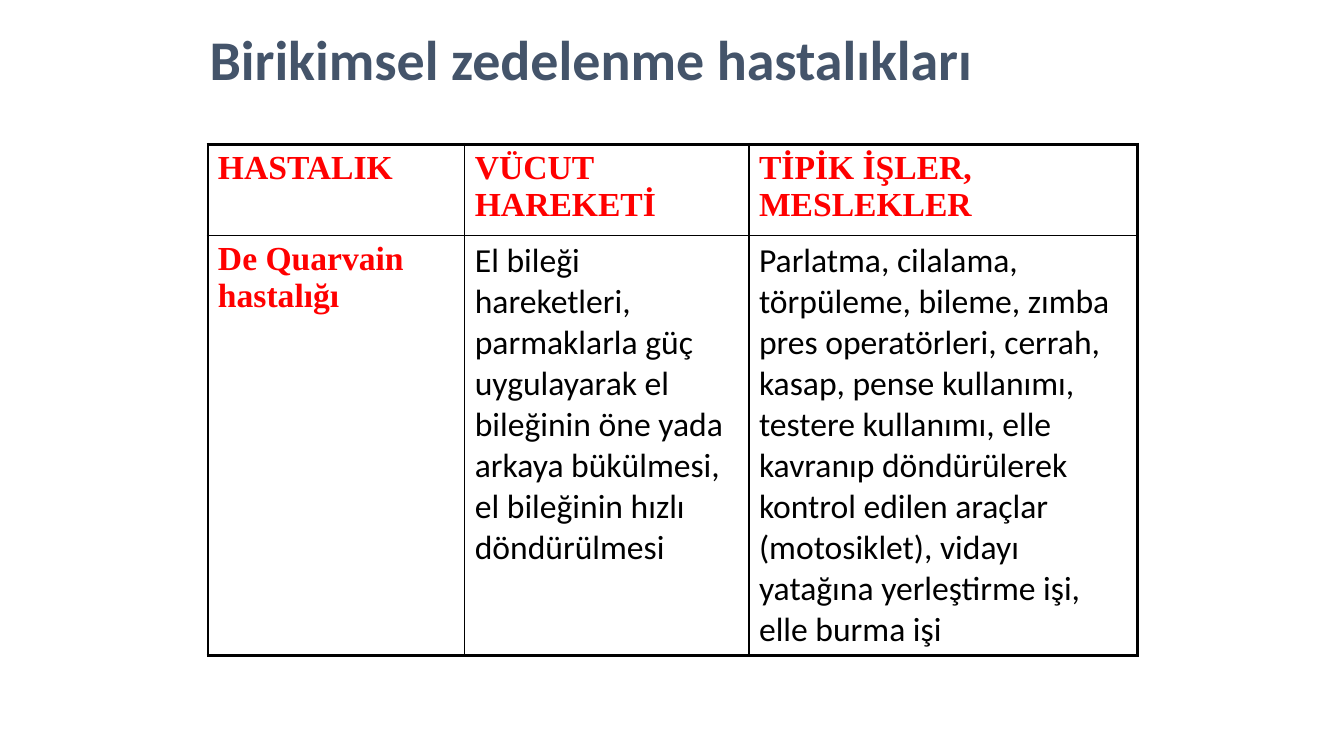
import dataclasses

import pptx
import pptx.dml.color
import pptx.enum.text
import pptx.oxml
import pptx.oxml.ns
import pptx.util

Pt = pptx.util.Pt
RGB = pptx.dml.color.RGBColor.from_string


@dataclasses.dataclass(frozen=True)
class Theme:
    title_color: str = "44546A"
    label_color: str = "FF0000"
    body_color: str = "000000"
    border_color: str = "000000"
    sans: str = "Calibri"
    serif: str = "Times New Roman"
    title_size: float = 40
    table_size: float = 24
    outer_border: float = 2.25
    inner_border: float = 1


THEME = Theme()

HEADING = "Birikimsel zedelenme hastalıkları"
DISEASES = [
    ["HASTALIK", "VÜCUT HAREKETİ", "TİPİK İŞLER, MESLEKLER"],
    [
        "De Quarvain hastalığı",
        "El bileği hareketleri, parmaklarla güç uygulayarak el bileğinin öne "
        "yada arkaya bükülmesi, el bileğinin hızlı döndürülmesi",
        "Parlatma, cilalama, törpüleme, bileme, zımba pres operatörleri, cerrah, "
        "kasap, pense kullanımı, testere kullanımı, elle kavranıp döndürülerek "
        "kontrol edilen araçlar (motosiklet), vidayı yatağına yerleştirme işi, "
        "elle burma işi",
    ],
]
COLUMN_WIDTHS = [183.5, 203, 277.5]
ROW_HEIGHTS = [65, 299]


def style_font(font, name, size, color, bold):
    font.name = name
    font.size = Pt(size)
    font.bold = bold
    font.color.rgb = RGB(color)


def set_borders(cell, widths):
    """Draw the cell's edges, given as a width for each of L, R, T and B."""
    properties = cell._tc.get_or_add_tcPr()
    for side, width in widths.items():
        properties.append(pptx.oxml.parse_xml(
            f'<a:ln{side} {pptx.oxml.ns.nsdecls("a")} w="{int(Pt(width))}">'
            f'<a:solidFill><a:srgbClr val="{THEME.border_color}"/></a:solidFill>'
            f'</a:ln{side}>'))


def add_heading(slide, left, top, width, height):
    heading = slide.shapes.title
    heading.left, heading.top = Pt(left), Pt(top)
    heading.width, heading.height = Pt(width), Pt(height)
    frame = heading.text_frame
    frame.text = HEADING
    frame.word_wrap = True
    frame.auto_size = pptx.enum.text.MSO_AUTO_SIZE.NONE
    frame.vertical_anchor = pptx.enum.text.MSO_ANCHOR.MIDDLE
    line = frame.paragraphs[0]
    line.alignment = pptx.enum.text.PP_ALIGN.LEFT
    line.line_spacing = 0.9
    style_font(line.font, THEME.sans, THEME.title_size, THEME.title_color, True)


def add_disease_table(slide, left, top):
    last_row, last_column = len(ROW_HEIGHTS) - 1, len(COLUMN_WIDTHS) - 1
    diseases = slide.shapes.add_table(
        len(ROW_HEIGHTS), len(COLUMN_WIDTHS), Pt(left), Pt(top),
        Pt(sum(COLUMN_WIDTHS)), Pt(sum(ROW_HEIGHTS))).table
    diseases.first_row = diseases.horz_banding = False
    for column, width in zip(diseases.columns, COLUMN_WIDTHS):
        column.width = Pt(width)
    for row, height in zip(diseases.rows, ROW_HEIGHTS):
        row.height = Pt(height)

    def border(is_outer):
        return THEME.outer_border if is_outer else THEME.inner_border

    for r, entries in enumerate(DISEASES):
        for c, entry in enumerate(entries):
            cell = diseases.cell(r, c)
            cell.text = entry
            set_borders(cell, {"L": border(c == 0), "R": border(c == last_column),
                               "T": border(r == 0), "B": border(r == last_row)})
            cell.fill.background()
            # The header row and the first column are labels
            is_label = r == 0 or c == 0
            style_font(cell.text_frame.paragraphs[0].font,
                       THEME.serif if is_label else THEME.sans, THEME.table_size,
                       THEME.label_color if is_label else THEME.body_color, is_label)


def main():
    deck = pptx.Presentation()
    deck.slide_width, deck.slide_height = Pt(960), Pt(540)
    slide = deck.slides.add_slide(deck.slide_layouts.get_by_name("Title Only"))
    add_heading(slide, left=142.5, top=16.5, width=669.5, height=56)
    add_disease_table(slide, left=148.5, top=103)
    deck.save("out.pptx")


if __name__ == "__main__":
    main()
